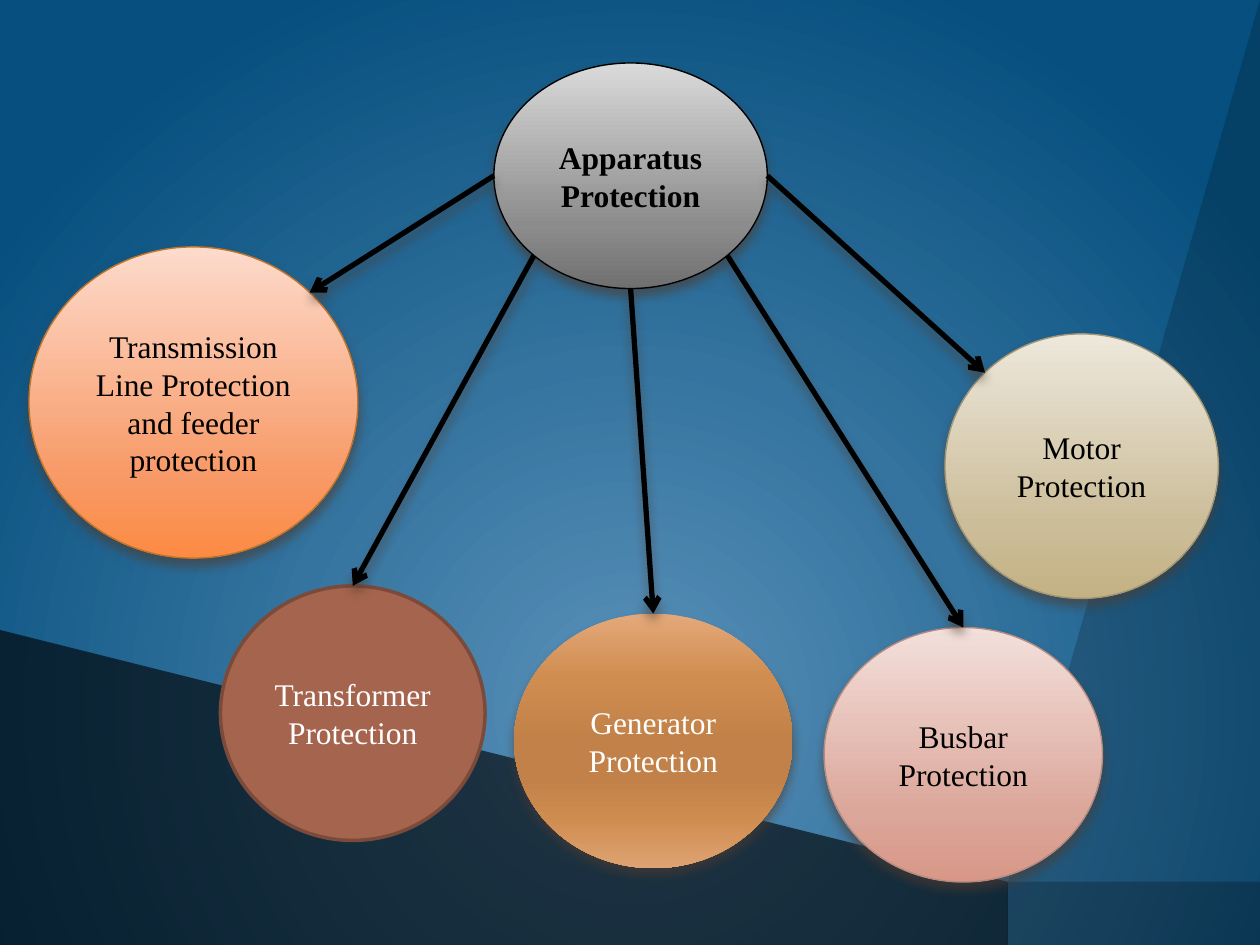
from math import cos, radians, sin

from lxml.etree import SubElement
from pptx import Presentation
from pptx.dml.color import RGBColor
from pptx.enum.shapes import MSO_CONNECTOR as Connector, MSO_SHAPE as Shape
from pptx.enum.text import MSO_ANCHOR as Anchor, PP_ALIGN as Align
from pptx.oxml.ns import qn
from pptx.util import Inches, Pt

FONT = "Times New Roman"
BLACK, WHITE, SHADOW = "000000", "FFFFFF", "4E3B30"
BACKGROUND = [(0, "70B6E8"), (100, "08639E")]
PANELS = [
    (20, [(0, 0), (9.71, 0), (7.94, 6.61), (7.9, 6.67), (7.83, 6.68), (0, 4.58)]),
    (70, [(0, 4.68), (7.8, 6.78), (7.86, 6.82), (7.87, 6.89), (7.7, 7.5), (0, 7.5)]),
    (50, [(8.08, 6.85), (10, 7.37), (10, 7.5), (7.81, 7.5), (7.97, 6.92), (8, 6.87), (8.04, 6.85)]),
    (35, [(9.82, 0), (10, 0), (10, 7.26), (8.1, 6.75), (8.05, 6.71), (8.04, 6.64)]),
]
HUB = "Apparatus Protection"
LINE_FEEDER = "Transmission Line Protection and feeder protection"
CIRCLES = {
    HUB: dict(at=(3.92, 0.5, 2.17, 1.79), text=BLACK, line=(BLACK, 0.79),
              stops=[(0, "DADADA"), (72, "8C8C8C"), (100, "707070")]),
    LINE_FEEDER: dict(at=(0.23, 1.96, 2.61, 2.47), text=BLACK, line=("C17529", 0.79),
                      stops=[(0, "FDDBCC"), (72, "F89B69"), (100, "FC8A43")]),
    "Transformer Protection": dict(at=(1.75, 4.65, 2.1, 2.02), text=WHITE,
                                   line=("7A4A3A", 2), solid="A5644E"),
    "Generator Protection": dict(at=(4.08, 4.87, 2.21, 2.02), text=WHITE, line=None,
                                 stops=[(0, "E4A97A"), (25, "D08D50"), (50, "C18148"),
                                        (65, "C18148"), (80, "CF8C4F"), (100, "DEA372")]),
    "Motor Protection": dict(at=(7.5, 2.65, 2.17, 2.1), text=BLACK, line=("A19574", 0.79),
                             stops=[(0, "EDE8DC"), (72, "CCBD99"), (100, "C4B284")]),
    "Busbar Protection": dict(at=(6.54, 4.98, 2.21, 2.02), text=BLACK, line=("B58B80", 0.79),
                              stops=[(0, "F3E0DB"), (72, "DCA79B"), (100, "D89787")]),
}
TOP = 270
ARROWS = [
    (180, LINE_FEEDER, 315),
    (135, "Transformer Protection", TOP),
    (90, "Generator Protection", TOP),
    (45, "Busbar Protection", TOP),
    (0, "Motor Protection", 225),
]


def color(value):
    return RGBColor.from_string(value)


def add(parent, tag, **attributes):
    return SubElement(parent, qn(tag), {key: str(value) for key, value in attributes.items()})


def set_gradient(fill, holder, stops):
    fill.gradient()
    gradient = holder.find(qn("a:gradFill"))
    for child in list(gradient):
        gradient.remove(child)
    stop_list = add(gradient, "a:gsLst")
    for position, value in stops:
        add(add(stop_list, "a:gs", pos=position * 1000), "a:srgbClr", val=value)
    return gradient


def set_alpha(color_element, percent):
    add(color_element, "a:alpha", val=percent * 1000)


def add_shadow(effects):
    shadow = add(effects, "a:outerShdw", blurRad=Pt(6), dist=Pt(4), dir=90 * 60000,
                 algn="ctr", rotWithShape=0)
    set_alpha(add(shadow, "a:srgbClr", val=SHADOW), 60)


def rim(name, angle):
    left, top, width, height = CIRCLES[name]["at"]
    turn = radians(angle)
    return (Inches(left + width / 2 * (1 + cos(turn))),
            Inches(top + height / 2 * (1 + sin(turn))))


def add_panel(page, alpha, points):
    builder = page.shapes.build_freeform(*points[0], scale=Inches(1))
    builder.add_line_segments(points[1:], close=True)
    panel = builder.convert_to_shape()
    panel.shadow.inherit = False
    panel.fill.solid()
    panel.fill.fore_color.rgb = color(BLACK)
    set_alpha(panel.element.spPr.find(qn("a:solidFill"))[0], alpha)
    panel.line.fill.background()


def add_circle(page, name, style):
    circle = page.shapes.add_shape(Shape.OVAL, *map(Inches, style["at"]))
    properties = circle.element.spPr
    circle.shadow.inherit = False
    if "stops" in style:
        gradient = set_gradient(circle.fill, properties, style["stops"])
        add(gradient, "a:lin", ang=90 * 60000, scaled=0)
        add_shadow(properties.find(qn("a:effectLst")))
    else:
        circle.fill.solid()
        circle.fill.fore_color.rgb = color(style["solid"])
    if style["line"]:
        circle.line.color.rgb = color(style["line"][0])
        circle.line.width = Pt(style["line"][1])
    else:
        circle.line.fill.background()
    frame = circle.text_frame
    frame.word_wrap = True
    frame.vertical_anchor = Anchor.MIDDLE
    para = frame.paragraphs[0]
    para.text = name
    para.alignment = Align.CENTER
    para.font.name = FONT
    para.font.size = Pt(18)
    para.font.bold = name == HUB
    para.font.color.rgb = color(style["text"])
    return circle


def add_arrow(page, circles, start_angle, target, end_angle):
    arrow = page.shapes.add_connector(Connector.STRAIGHT, *rim(HUB, start_angle),
                                      *rim(target, end_angle))
    if end_angle == TOP:
        arrow.end_connect(circles[target], 0)
    arrow.line.color.rgb = color(BLACK)
    arrow.line.width = Pt(3)
    properties = arrow.element.spPr
    add(properties.find(qn("a:ln")), "a:tailEnd", type="arrow")
    add_shadow(add(properties, "a:effectLst"))


def main():
    deck = Presentation()
    deck.slide_width, deck.slide_height = Inches(10), Inches(7.5)
    page = deck.slides.add_slide(deck.slide_layouts[6])
    fill = page.background.fill
    holder = page.element.cSld.find(qn("p:bg")).find(qn("p:bgPr"))
    gradient = set_gradient(fill, holder, BACKGROUND)
    add(add(gradient, "a:path", path="circle"), "a:fillToRect", l=50000, t=50000, r=50000, b=0)
    for alpha, points in PANELS:
        add_panel(page, alpha, points)
    circles = {name: add_circle(page, name, style) for name, style in CIRCLES.items()}
    for start_angle, target, end_angle in ARROWS:
        add_arrow(page, circles, start_angle, target, end_angle)
    deck.save("out.pptx")


if __name__ == "__main__":
    main()
